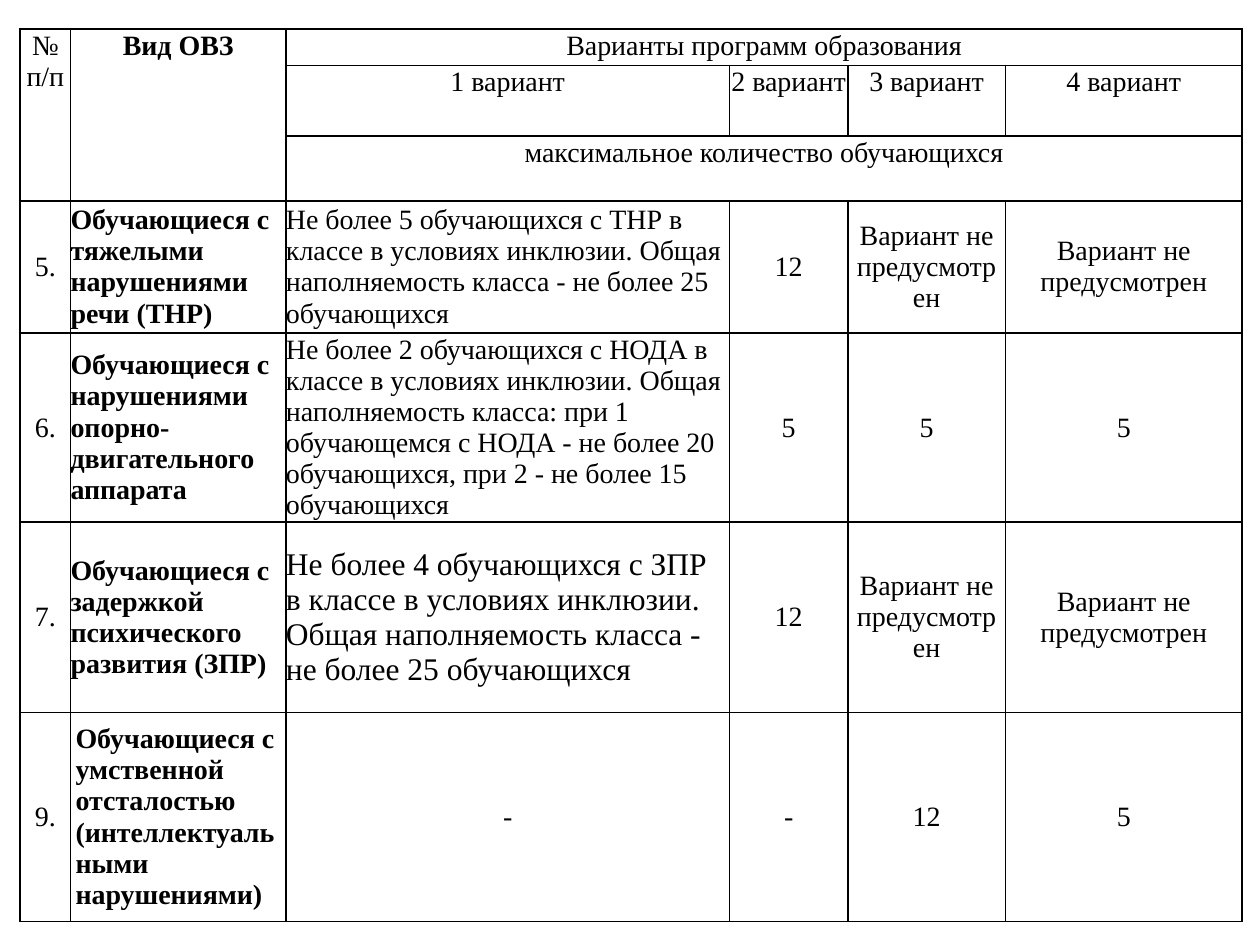
import pptx
import pptx.util
import pptx.dml.color
import pptx.enum.text
import pptx.oxml
import pptx.oxml.ns

Inches = pptx.util.Inches
Align = pptx.enum.text.PP_ALIGN
Anchor = pptx.enum.text.MSO_ANCHOR

COLORS = {"text": "000000", "border": "000000"}
TIGHT = (0, 0.01)
ROOMY = (0.04, 0.07)
COLUMN_WIDTHS = [0.4, 1.71, 3.52, 0.94, 1.25, 1.88]
ROW_HEIGHTS = [0.29, 0.56, 0.51, 1.05, 1.49, 1.51, 1.66]
ABSENT = "Вариант не предусмотрен"

HEADERS = [
    (0, 0, 3, 1, "№ п/п"),
    (0, 1, 3, 1, "Вид ОВЗ"),
    (0, 2, 1, 4, "Варианты программ образования"),
    (1, 2, 1, 1, "1 вариант"),
    (1, 3, 1, 1, "2 вариант"),
    (1, 4, 1, 1, "3 вариант"),
    (1, 5, 1, 1, "4 вариант"),
    (2, 2, 1, 4, "максимальное количество обучающихся"),
]
CATEGORIES = [
    ("5.", "Обучающиеся с тяжелыми нарушениями речи (ТНР)",
     "Не более 5 обучающихся с ТНР в классе в условиях инклюзии. "
     "Общая наполняемость класса - не более 25 обучающихся",
     "12", ABSENT, ABSENT),
    ("6.", "Обучающиеся с нарушениями опорно-двигательного аппарата",
     "Не более 2 обучающихся с НОДА в классе в условиях инклюзии. "
     "Общая наполняемость класса: при 1 обучающемся с НОДА - не более 20 "
     "обучающихся, при 2 - не более 15 обучающихся",
     "5", "5", "5"),
    ("7.", "Обучающиеся с задержкой психического развития (ЗПР)",
     "Не более 4 обучающихся с ЗПР в классе в условиях инклюзии. "
     "Общая наполняемость класса - не более 25 обучающихся",
     "12", ABSENT, ABSENT),
    ("9.", "Обучающиеся с умственной отсталостью "
     "(интеллектуальными нарушениями)", "-", "-", "12", "5"),
]


def write_text(cell, text, size=16, bold=False, align=Align.CENTER,
               anchor=Anchor.TOP, margins=TIGHT, space_after=0):
    cell.margin_left = cell.margin_right = Inches(margins[0])
    cell.margin_top = cell.margin_bottom = Inches(margins[1])
    cell.vertical_anchor = anchor
    paragraph = cell.text_frame.paragraphs[0]
    paragraph.alignment = align
    paragraph.space_after = pptx.util.Pt(space_after)
    run = paragraph.add_run()
    run.text = text
    run.font.name = "Times New Roman"
    run.font.size = pptx.util.Pt(size)
    run.font.bold = bold
    run.font.color.rgb = pptx.dml.color.RGBColor.from_string(COLORS["text"])


class SlideBuilder:
    def __init__(self, presentation):
        self.slide = presentation.slides.add_slide(presentation.slide_layouts[6])
        self.border_width = pptx.util.Pt(1)

    def add_borders(self, cell):
        properties = cell._tc.get_or_add_tcPr()
        for side in ("lnL", "lnR", "lnT", "lnB"):
            properties.append(pptx.oxml.parse_xml(
                f'<a:{side} {pptx.oxml.ns.nsdecls("a")} w="{self.border_width}">'
                f'<a:solidFill><a:srgbClr val="{COLORS["border"]}"/></a:solidFill>'
                f'</a:{side}>'))

    def add_table(self, left, top, widths, heights):
        table = self.slide.shapes.add_table(
            len(heights), len(widths), Inches(left), Inches(top),
            Inches(sum(widths)), Inches(sum(heights))).table
        table.first_row = table.horz_banding = False
        for column, width in zip(table.columns, widths):
            column.width = Inches(width)
        for row, height in zip(table.rows, heights):
            row.height = Inches(height)
        for cell in table.iter_cells():
            self.add_borders(cell)
            cell.fill.background()
        return table


def main():
    presentation = pptx.Presentation()
    presentation.slide_width = Inches(10)
    presentation.slide_height = Inches(7.5)
    builder = SlideBuilder(presentation)
    table = builder.add_table(0.16, 0.23, COLUMN_WIDTHS, ROW_HEIGHTS)

    for row, column, row_span, column_span, text in HEADERS:
        cell = table.cell(row, column)
        if row_span * column_span > 1:
            cell.merge(table.cell(row + row_span - 1, column + column_span - 1))
        write_text(cell, text, bold=text == "Вид ОВЗ", space_after=6)

    for row, category in enumerate(CATEGORIES, start=3):
        number = category[0]
        for column, text in enumerate(category):
            is_description = column == 1 or (column == 2 and text != "-")
            write_text(
                table.cell(row, column), text,
                size=18 if number == "7." and column == 2 else 16,
                bold=column == 1,
                align=Align.LEFT if is_description else Align.CENTER,
                anchor=Anchor.MIDDLE,
                margins=ROOMY if column > 2 or number == "9." else TIGHT)

    presentation.save("out.pptx")


if __name__ == "__main__":
    main()
